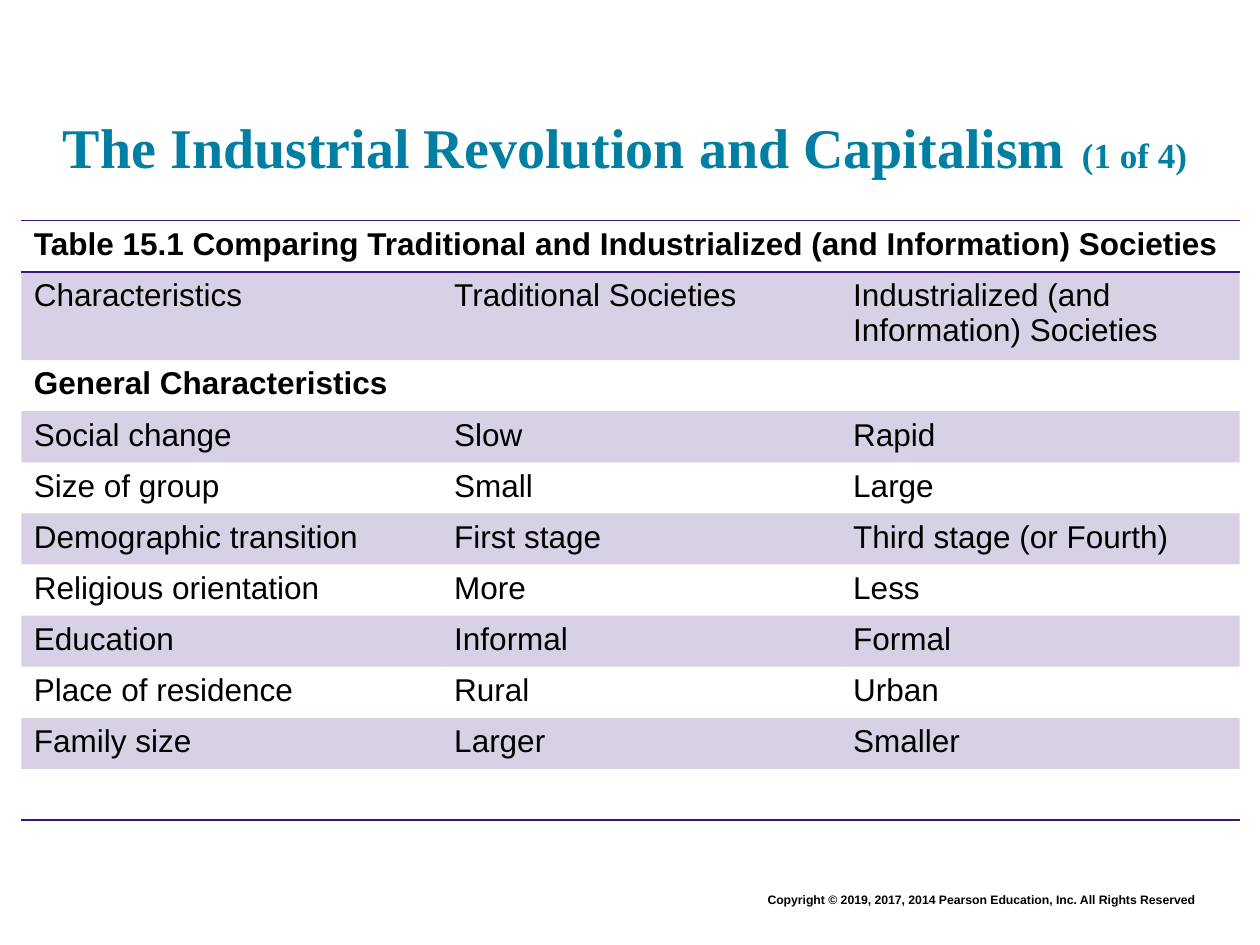
from lxml.etree import SubElement
from pptx import Presentation
from pptx.dml.color import RGBColor
from pptx.enum.text import MSO_ANCHOR, PP_ALIGN
from pptx.oxml import parse_xml
from pptx.oxml.ns import nsdecls, qn
from pptx.util import Cm, Pt

TEAL = RGBColor(0x00, 0x7F, 0xA3)
PURPLE = RGBColor(0x3C, 0x15, 0x81)
BLACK = RGBColor(0, 0, 0)
PLAIN = "{2D5ABB26-0587-4C30-8999-92F81FD0307C}"

TITLE = [
    ("The Industrial Revolution and Capitalism", 32),
    (" ", 36),
    ("(1 of 4)", 20),
]
NOTICE = "Copyright © 2019, 2017, 2014 Pearson Education, Inc. All Rights Reserved"
ROWS = [
    ("Table 15.1 Comparing Traditional and Industrialized (and Information) Societies",),
    ("Characteristics", "Traditional Societies", "Industrialized (and Information) Societies"),
    ("General Characteristics",),
    ("Social change", "Slow", "Rapid"),
    ("Size of group", "Small", "Large"),
    ("Demographic transition", "First stage", "Third stage (or Fourth)"),
    ("Religious orientation", "More", "Less"),
    ("Education", "Informal", "Formal"),
    ("Place of residence", "Rural", "Urban"),
    ("Family size", "Larger", "Smaller"),
    (),
]


def style(font, name, size, color, bold):
    """Set the face, size, colour and weight of a font."""
    font.name, font.bold = name, bold
    font.color.rgb = color
    if size:
        font.size = Pt(size)


def add_title(slide, left, top, width, height):
    """Place the title, seated on the bottom of its box."""
    frame = slide.shapes.add_textbox(left, top, width, height).text_frame
    frame.word_wrap = True
    frame.vertical_anchor = MSO_ANCHOR.BOTTOM
    frame.margin_left = frame.margin_right = 0
    frame.margin_top = frame.margin_bottom = 0
    para = frame.paragraphs[0]
    for text, size in TITLE:
        run = para.add_run()
        run.text = text
        run.font.size = Pt(size)
    style(para.font, "Times New Roman", None, TEAL, True)


def add_notice(slide, left, top, width, height):
    """Place the copyright line, set to the right."""
    frame = slide.shapes.add_textbox(left, top, width, height).text_frame
    frame.word_wrap = True
    para = frame.paragraphs[0]
    para.text = NOTICE
    para.alignment = PP_ALIGN.RIGHT
    style(para.font, "Arial", 7, BLACK, True)


def tint(cell):
    """Fill a cell with purple at a fifth of full strength."""
    cell.fill.solid()
    cell.fill.fore_color.rgb = PURPLE
    color = cell.fill._xPr.find(".//" + qn("a:srgbClr"))
    SubElement(color, qn("a:alpha"), val="20000")


def rule(cell, edge):
    """Draw a thin purple rule on one edge of a cell."""
    line = parse_xml(
        f'<a:{edge} {nsdecls("a")} w="{Pt(1)}"><a:solidFill>'
        f'<a:srgbClr val="{PURPLE}"/></a:solidFill></a:{edge}>'
    )
    cell._tc.get_or_add_tcPr().insert(0, line)


def add_grid(slide, left, top, width, height):
    """Place the table of societies, with every second row tinted."""
    count = len(ROWS)
    table = slide.shapes.add_table(count, 3, left, top, width, height).table
    table._tbl.tblPr.find(qn("a:tableStyleId")).text = PLAIN
    table.first_row = table.horz_banding = False
    shares = (0.345, 0.3275, 0.3275)
    for column, share in zip(table.columns, shares):
        column.width = int(width * share)
    for i, texts in enumerate(ROWS):
        for j in range(3):
            cell = table.cell(i, j)
            para = cell.text_frame.paragraphs[0]
            if j < len(texts):
                para.text = texts[j]
            style(para.font, "Arial", 18, BLACK, len(texts) == 1)
            if i % 2 and i < count - 1:
                tint(cell)
            else:
                cell.fill.background()
            if i in (0, count - 1):
                rule(cell, "lnB")
            if i == 0:
                rule(cell, "lnT")
    table.cell(0, 0).merge(table.cell(0, 2))


def main():
    """Build the slide and save it."""
    deck = Presentation()
    deck.slide_width, deck.slide_height = Cm(25.4), Cm(19.05)
    slide = deck.slides.add_slide(deck.slide_layouts[6])
    add_notice(slide, Cm(4.45), Cm(17.86), Cm(19.89), Cm(0.56))
    add_title(slide, Cm(1.27), Cm(0.61), Cm(23.7), Cm(3.05))
    add_grid(slide, Cm(0.43), Cm(4.45), Cm(24.56), Cm(11.33))
    deck.save("out.pptx")


if __name__ == "__main__":
    main()
